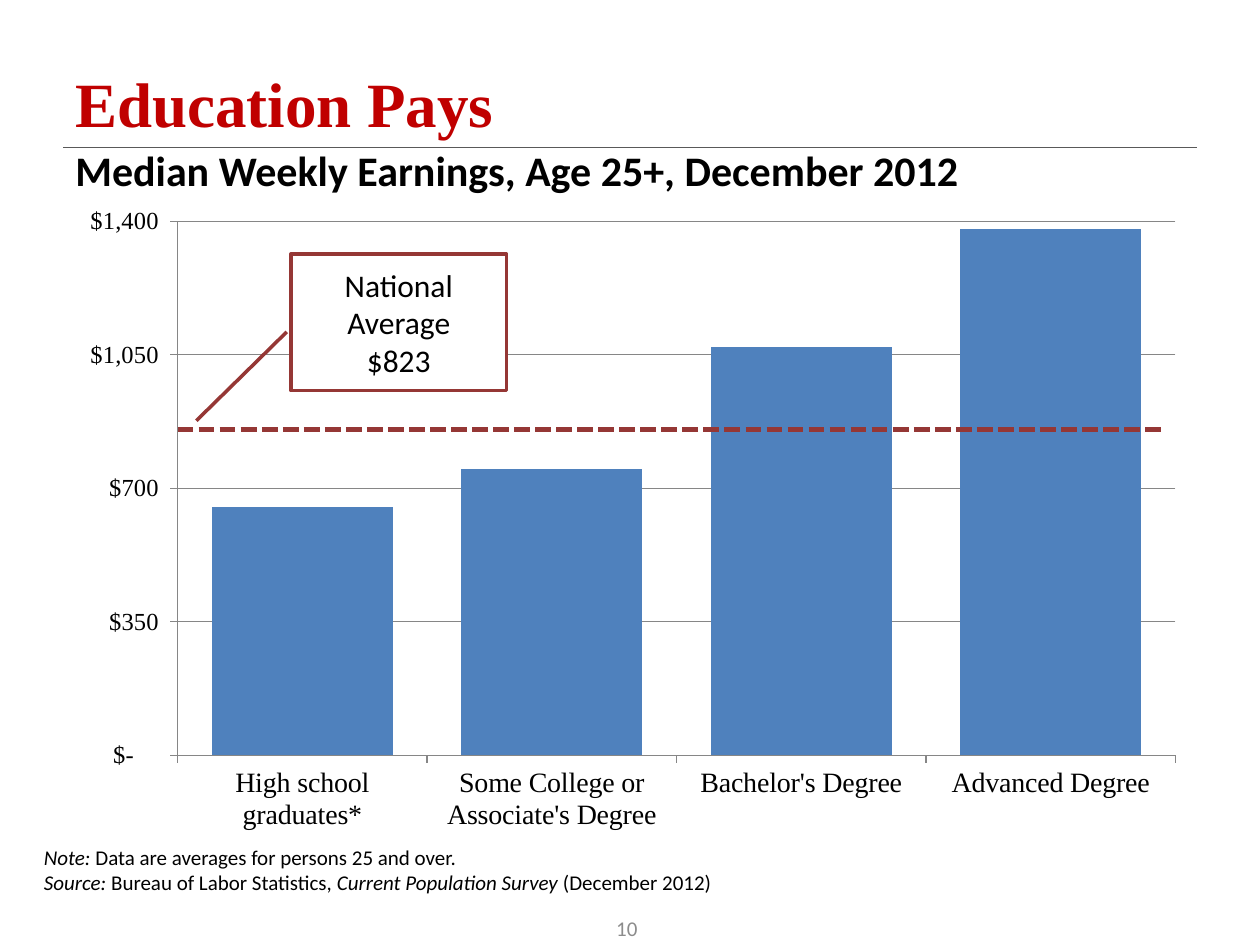
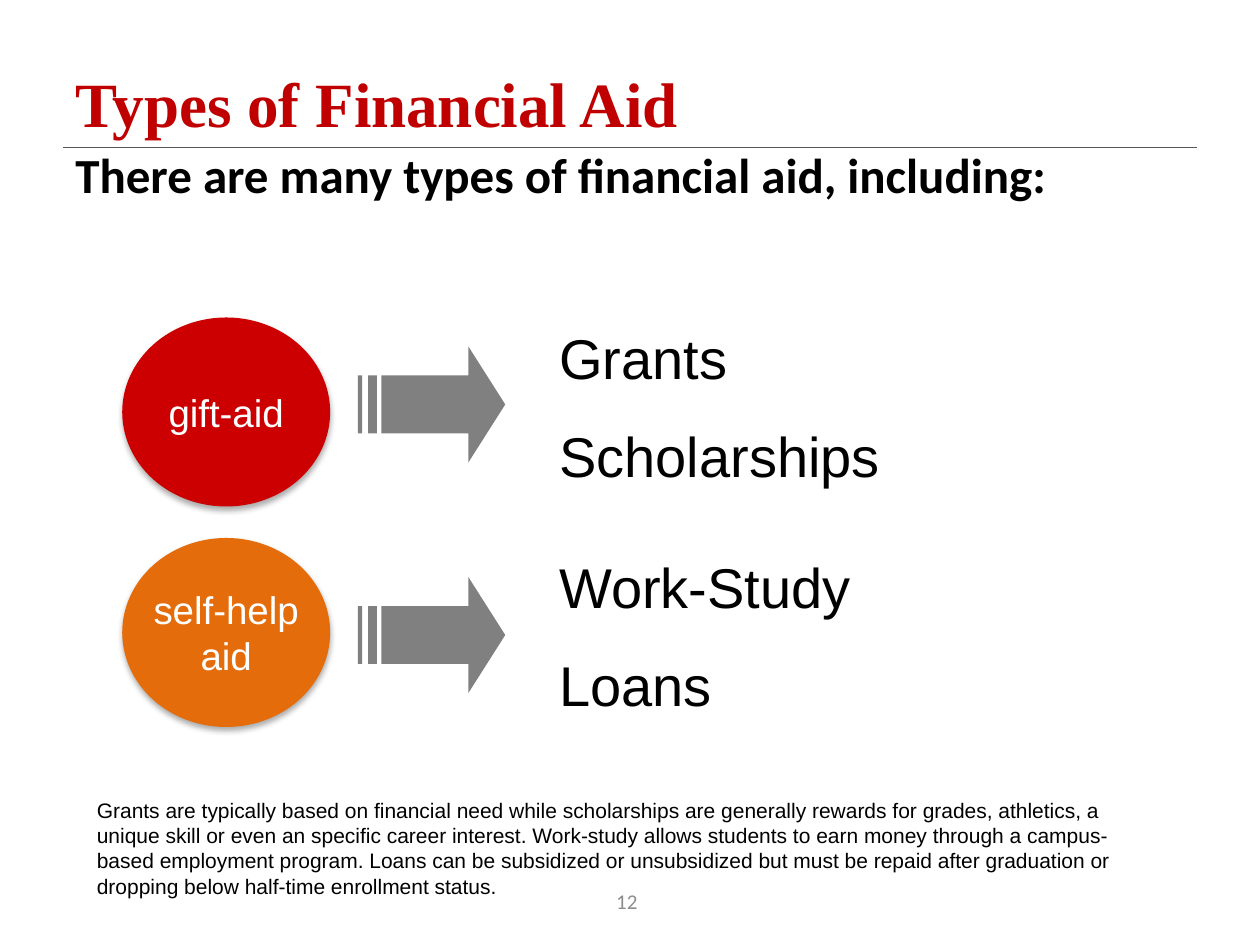
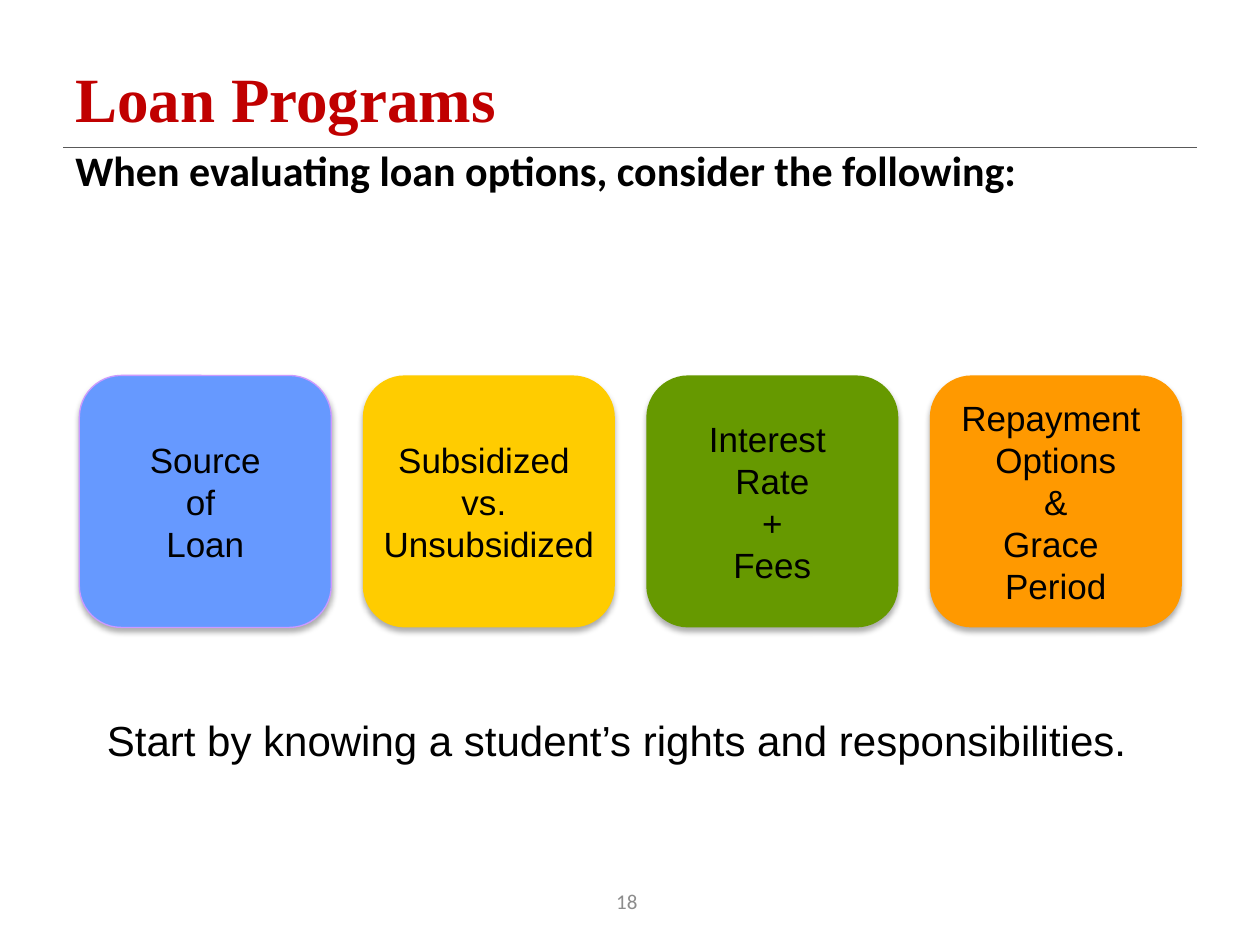
from lxml.etree import SubElement
from pptx import Presentation
from pptx.chart.data import CategoryChartData
from pptx.dml.color import RGBColor
from pptx.enum.chart import XL_CHART_TYPE, XL_TICK_MARK
from pptx.enum.dml import MSO_LINE
from pptx.enum.shapes import MSO_CONNECTOR, MSO_SHAPE
from pptx.enum.text import MSO_ANCHOR, PP_ALIGN
from pptx.oxml.ns import qn
from pptx.util import Inches, Pt

# Boxes are (left, top, width, height) in cells of a 40 by 30 grid
COLS, ROWS, CELL = 40, 30, 0.25

HUES = {
    "title": "C00000", "ink": "000000", "white": "FFFFFF", "rule": "595959",
    "page": "8C8C8C", "axis": "868686", "bar": "4F81BD", "mean": "953735",
    "gift": "CC0000", "self": "E46C0A", "arrow": "808080",
    "blue": "6699FF", "edge": "CC99FF", "gold": "FFCC00",
    "green": "669900", "orange": "FF9900",
}
SANS, SERIF, BODY = "Arial", "Times New Roman", "Calibri"
MONEY = '_("$"* #,##0_);_("$"* \\(#,##0\\);_("$"* "-"??_);_(@_)'


def hue(name):
    return RGBColor.from_string(HUES[name])


def grid(*cells):
    return [Inches(n * CELL) for n in cells]


def part(box, x, y, w=0, h=0):
    """Turn shares of a box into a box of its own."""
    left, top, wide, high = box
    return left + x * wide, top + y * high, w * wide, h * high


def style(font, size, face=BODY, color="ink", bold=False):
    font.size, font.name, font.bold = Pt(size), face, bold
    font.color.rgb = hue(color)


def write(shape, lines, size, face=BODY, color="ink", bold=False, align=PP_ALIGN.LEFT,
          anchor=MSO_ANCHOR.TOP, wrap=True, gaps=(), pitch=None):
    """Fill a shape; a line is a string or a list of (text, italic) runs."""
    frame = shape.text_frame
    frame.word_wrap, frame.vertical_anchor = wrap, anchor
    for i, line in enumerate(lines):
        para = frame.add_paragraph() if i else frame.paragraphs[0]
        para.alignment = align
        if pitch:
            para.line_spacing = pitch
        if i and gaps:
            para.space_before = Pt(gaps[i - 1])
        for words, slant in [(line, False)] if isinstance(line, str) else line:
            run = para.add_run()
            run.text = words
            style(run.font, size, face, color, bold)
            run.font.italic = slant


def label(slide, box, lines, size, **form):
    write(slide.shapes.add_textbox(*grid(*box)), lines, size, **form)


def paint(shape, fill, edge=None, width=0.75):
    shape.shadow.inherit = False
    shape.fill.solid()
    shape.fill.fore_color.rgb = hue(fill)
    if edge:
        shape.line.color.rgb = hue(edge)
        shape.line.width = Pt(width)
    else:
        shape.line.fill.background()


def form(slide, kind, box, fill, edge=None, width=0.75):
    shape = slide.shapes.add_shape(kind, *grid(*box))
    paint(shape, fill, edge, width)
    return shape


def shade(shape):
    """Soft shadow straight below the shape."""
    effect = shape.element.spPr.find(qn("a:effectLst"))
    outer = SubElement(effect, qn("a:outerShdw"), blurRad=str(Pt(3.5)),
                       dist=str(Pt(2.2)), dir="5400000", rotWithShape="0")
    color = SubElement(outer, qn("a:srgbClr"), val=HUES["ink"])
    SubElement(color, qn("a:alpha"), val="32000")


def stroke(slide, start, end, color, width, dash=None):
    line = slide.shapes.add_connector(MSO_CONNECTOR.STRAIGHT, *grid(*start, *end))
    line.line.color.rgb = hue(color)
    line.line.width = Pt(width)
    if dash:
        line.line.dash_style = dash
    SubElement(line.element.spPr, qn("a:effectLst"))


def base(deck, title, lead, page, size=24, foot=27.8, pitch=None):
    """Slide with rule, title, lead line and page number."""
    slide = deck.slides.add_slide(deck.slide_layouts[6])
    stroke(slide, (2, 4.68), (COLS - 2, 4.68), "rule", 0.75)
    label(slide, (2, 2, 36, 2.48), [title], 36, face=SERIF, color="title",
          bold=True, anchor=MSO_ANCHOR.MIDDLE, pitch=pitch)
    label(slide, (2, 4.4, 36, 2.12), [lead], size, bold=True)
    label(slide, (16.24, foot, 7.32, 1.6), [page], 12, color="page",
          align=PP_ALIGN.CENTER, anchor=MSO_ANCHOR.MIDDLE)
    return slide


def fix(chart, x, y, w, h):
    """Pin the inner plot area to shares of the chart."""
    plot = chart.element.find(".//" + qn("c:plotArea"))
    layout = plot.find(qn("c:layout"))
    if layout is None:
        layout = SubElement(plot, qn("c:layout"))
        plot.insert(0, layout)
    manual = SubElement(layout, qn("c:manualLayout"))
    rules = [("layoutTarget", "inner"), ("xMode", "edge"), ("yMode", "edge"),
             ("x", x), ("y", y), ("w", w), ("h", h)]
    for tag, val in rules:
        SubElement(manual, qn("c:" + tag), val=str(val))


def pay(slide, box):
    """Earnings columns with the average line and its callout."""
    data = CategoryChartData()
    data.categories = ["High school graduates*", "Some College or Associate's Degree",
                       "Bachelor's Degree", "Advanced Degree"]
    data.add_series("Series 1", [650, 750, 1070, 1380])
    chart = slide.shapes.add_chart(XL_CHART_TYPE.COLUMN_CLUSTERED, *grid(*box), data).chart
    chart.has_legend = chart.has_title = False
    style(chart.font, 10)
    plot = chart.plots[0]
    plot.gap_width, plot.vary_by_categories = 38, False
    bars = plot.series[0]
    bars.invert_if_negative = False
    bars.format.fill.solid()
    bars.format.fill.fore_color.rgb = hue("bar")

    for axis, size in ((chart.category_axis, 16), (chart.value_axis, 14)):
        style(axis.tick_labels.font, size, SERIF)
        axis.major_tick_mark = XL_TICK_MARK.OUTSIDE
        axis.format.line.color.rgb = hue("axis")
    scale = chart.value_axis
    scale.minimum_scale, scale.maximum_scale, scale.major_unit = 0, 1400, 350
    scale.major_gridlines.format.line.color.rgb = hue("axis")
    scale.tick_labels.number_format = MONEY
    scale.tick_labels.number_format_is_linked = False

    area = (0.1, 0.04, 0.88, 0.82)
    fix(chart, *area)
    inner = part(box, *area)
    stroke(slide, part(inner, 0, 0.39)[:2], part(inner, 0.99, 0.39)[:2],
           "mean", 3, MSO_LINE.SQUARE_DOT)
    note = form(slide, MSO_SHAPE.LINE_CALLOUT_1, part(box, 0.2, 0.09, 0.19, 0.21),
                "white", "mean", 2)
    for i, val in enumerate((0.57, -0.02, 1.22, -0.44)):
        note.adjustments[i] = val
    write(note, ["National Average", "$823"], 18, align=PP_ALIGN.CENTER,
          anchor=MSO_ANCHOR.MIDDLE)


def arrow(slide, box):
    """Striped arrow: a head with two bars behind it."""
    head = [(0.75, 0), (0.75, 0.25), (0.16, 0.25), (0.16, 0.75),
            (0.75, 0.75), (0.75, 1), (1, 0.5)]
    bars = [[(a, 0.25), (a, 0.75), (b, 0.75), (b, 0.25)]
            for a, b in ((0.07, 0.13), (0, 0.03))]
    pen = None
    for path in [head] + bars:
        first, *rest = [grid(*part(box, *spot)[:2]) for spot in path]
        if pen:
            pen.move_to(*first)
        else:
            pen = slide.shapes.build_freeform(*first)
        pen.add_line_segments(rest, close=True)
    paint(pen.convert_to_shape(), "arrow")


def aid(slide, box):
    """Rows of disc and arrow, with the kinds of aid beside them."""
    left, top, wide, high = box
    rows = [("gift", ["gift-aid"]), ("self", ["self-help", "aid"])]
    for i, (color, lines) in enumerate(rows):
        disc = form(slide, MSO_SHAPE.OVAL, (left, top + 7 * i, 6.6, 6), color)
        shade(disc)
        write(disc, lines, 22, face=SANS, color="white", align=PP_ALIGN.CENTER,
              anchor=MSO_ANCHOR.MIDDLE, wrap=False)
        arrow(slide, (left + 7.48, top + 0.92 + 7.32 * i, 4.68, 3.68))
    label(slide, (left + 13.48, top, wide - 13.48, high),
          ["Grants", "Scholarships", "Work-Study", "Loans"], 32, face=SANS,
          gaps=(17.5, 36.5, 17.5))


def cards(slide, box):
    """Equal rounded cards, one cell apart."""
    left, top, wide, high = box
    items = [
        ("blue", "edge", ["Source", "of ", "Loan"]),
        ("gold", None, ["Subsidized ", "vs. ", "Unsubsidized"]),
        ("green", None, ["Interest ", "Rate", "+", "Fees"]),
        ("orange", None, ["Repayment ", "Options", "&", "Grace ", "Period"]),
    ]
    step = (wide + 1) / len(items)
    for i, (color, edge, lines) in enumerate(items):
        card = form(slide, MSO_SHAPE.ROUNDED_RECTANGLE,
                    (left + step * i, top, step - 1, high), color, edge)
        shade(card)
        write(card, lines, 20, face=SANS, align=PP_ALIGN.CENTER,
              anchor=MSO_ANCHOR.MIDDLE, wrap=False)


def main():
    deck = Presentation()
    deck.slide_width, deck.slide_height = grid(COLS, ROWS)

    # Earnings
    slide = base(deck, "Education Pays", "Median Weekly Earnings, Age 25+, December 2012",
                 "10", foot=28.68)
    pay(slide, (2.04, 6.2, 36, 20.68))
    label(slide, (1, 26.6, 23.36, 2), [
        [("Note:", True), (" Data are averages for persons 25 and over.", False)],
        [("Source: ", True), ("Bureau of Labor Statistics, ", False),
         ("Current Population Survey", True), (" (December 2012)", False)],
    ], 12)

    # Kinds of aid
    slide = base(deck, "Types of Financial Aid",
                 "There are many types of financial aid, including:", "12", size=28)
    aid(slide, (3.88, 10.08, 33.48, 13))
    label(slide, (2.68, 25.12, 34.32, 3.64), [
        "Grants are typically based on financial need while scholarships are generally "
        "rewards for grades, athletics, a unique skill or even an specific career interest. "
        "Work-study allows students to earn money through a campus-based employment program. "
        "Loans can be subsidized or unsubsidized but must be repaid after graduation or "
        "dropping below half-time enrollment status."], 12, face=SANS)

    # Loans
    slide = base(deck, "Loan Programs",
                 "When evaluating loan options, consider the following:", "18", pitch=0.9)
    cards(slide, (2.52, 11.92, 35, 8))
    label(slide, (3, 22.68, 35.68, 1.88),
          ["Start by knowing a student’s rights and responsibilities."], 24,
          face=SANS, pitch=0.9)

    deck.save("out.pptx")


if __name__ == "__main__":
    main()
